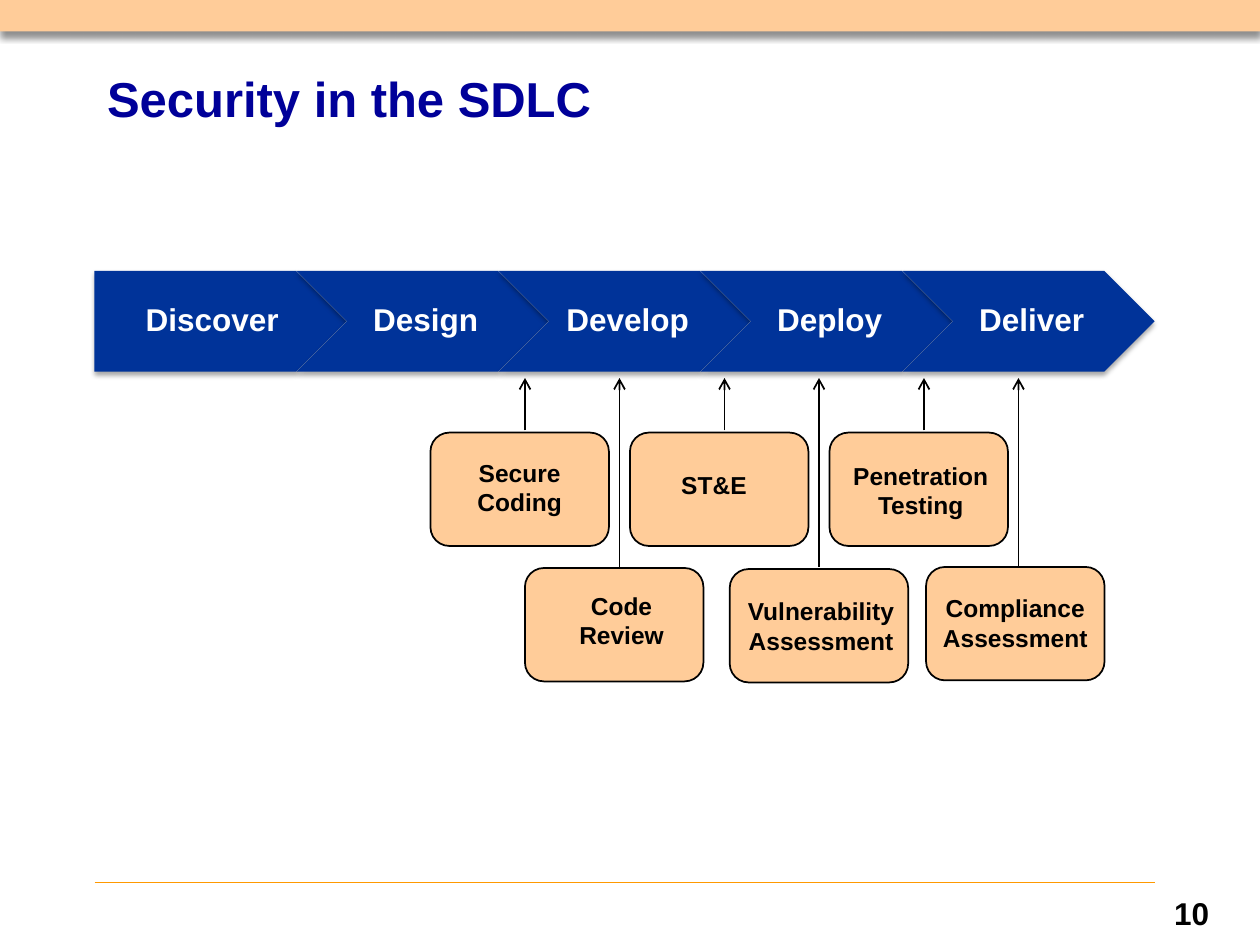
from dataclasses import dataclass

from lxml import etree
from pptx import Presentation
from pptx import util as u
from pptx.dml.color import RGBColor
from pptx.enum import shapes, text
from pptx.oxml import parse_xml
from pptx.oxml.ns import nsdecls, qn

# The grid has 120 columns and 90 rows of square cells.
COLUMNS, ROWS = 120, 90
CELL = u.Inches(10) // COLUMNS

PEACH = RGBColor(0xFF, 0xCC, 0x99)
ORANGE = RGBColor(0xFF, 0x99, 0x00)
NAVY = RGBColor(0x00, 0x00, 0x99)
BLUE = RGBColor(0x00, 0x33, 0x99)
BLACK = RGBColor(0x00, 0x00, 0x00)
WHITE = RGBColor(0xFF, 0xFF, 0xFF)
FONT = "Arial"

PHASES = ("Discover", "Design", "Develop", "Deploy", "Deliver")
PHASE_LEFT, PHASE_TOP = 9, 25.8
PHASE_WIDTH, PHASE_HEIGHT, PHASE_STEP = 24, 9.6, 19.24
PHASE_TIP = PHASE_HEIGHT / 2
ARROW_END = 36
ACTIVITY_WIDTH, ACTIVITY_HEIGHT = 17, 10.8


@dataclass(frozen=True)
class Box:
    left: float
    top: float
    width: float
    height: float

    def lengths(self) -> tuple[int, ...]:
        return tuple(grid(n) for n in (self.left, self.top, self.width, self.height))


@dataclass(frozen=True)
class Activity:
    name: str
    left: float
    top: float
    label: Box
    arrow_column: float
    arrow_start: float


ACTIVITIES = (
    Activity("Vulnerability Assessment", 69.5, 54.2, Box(68, 56.2, 20.4, 6.8), 78, 54),
    Activity("Compliance Assessment", 88.2, 54, Box(86.5, 55.9, 20.4, 6.8), 97, 54),
    Activity("ST&E", 60, 41.2, Box(63, 44.2, 10, 4.1), 69, 41),
    Activity("Penetration Testing", 79, 41.2, Box(77.5, 43.3, 20.4, 6.8), 88, 41),
    Activity("Code Review", 50, 54.1, Box(52.7, 55.7, 13, 6.8), 59, 54),
    Activity("Secure Coding", 41, 41.2, Box(44, 43, 11, 6.8), 50, 41),
)


def grid(cells: float) -> int:
    return round(cells * CELL)


def style_font(font, size: float, color: RGBColor) -> None:
    font.name, font.size, font.bold = FONT, u.Pt(size), True
    font.color.rgb = color


def add_shape(slide, preset, box: Box, fill: RGBColor, outline: RGBColor | None = None):
    shape = slide.shapes.add_shape(preset, *box.lengths())
    shape.shadow.inherit = False
    shape.fill.solid()
    shape.fill.fore_color.rgb = fill
    if outline is None:
        shape.line.fill.background()
    else:
        shape.line.color.rgb = outline
        shape.line.width = u.Pt(1)
    return shape


def drop_shadow(shape, blur: float, distance: float, opacity: int) -> None:
    """Cast a black shadow straight down; blur and distance are in points."""
    effects = shape._element.spPr.find(qn("a:effectLst"))
    effects.append(parse_xml(
        f'<a:outerShdw {nsdecls("a")} blurRad="{u.Pt(blur)}" dist="{u.Pt(distance)}" '
        f'dir="5400000" algn="t" rotWithShape="0"><a:srgbClr val="{BLACK}">'
        f'<a:alpha val="{opacity * 1000}"/></a:srgbClr></a:outerShdw>'))


def add_label(slide, words: str, box: Box, size: float, color: RGBColor):
    """Add centred bold text and return its text frame."""
    frame = slide.shapes.add_textbox(*box.lengths()).text_frame
    frame.word_wrap = True
    frame.text = words
    paragraph = frame.paragraphs[0]
    paragraph.alignment = text.PP_ALIGN.CENTER
    style_font(paragraph.runs[0].font, size, color)
    return frame


def add_line(slide, start: tuple[float, float], end: tuple[float, float],
             color: RGBColor, width: float):
    line = slide.shapes.add_connector(
        shapes.MSO_CONNECTOR.STRAIGHT, *(grid(n) for n in start + end))
    line.line.color.rgb = color
    line.line.width = u.Pt(width)
    etree.SubElement(line._element.spPr, qn("a:effectLst"))
    return line


def add_frame(slide) -> None:
    add_line(slide, (9, 84), (110, 84), ORANGE, 0.5)
    band = add_shape(slide, shapes.MSO_SHAPE.RECTANGLE, Box(0, 0, COLUMNS, 3), PEACH)
    drop_shadow(band, 4, 3, 43)
    number = add_label(slide, "10", Box(110, 84, 7, 2), 18, BLACK)
    number.paragraphs[0].line_spacing = u.Pt(25)


def add_title(slide) -> None:
    title = slide.shapes.title
    title.left, title.top, title.width, title.height = Box(9, 3.6, 101, 12.4).lengths()
    frame = title.text_frame
    frame.text = "Security in the SDLC"
    frame.vertical_anchor = text.MSO_ANCHOR.MIDDLE
    paragraph = frame.paragraphs[0]
    paragraph.alignment = text.PP_ALIGN.LEFT
    paragraph.line_spacing = u.Pt(28)
    style_font(paragraph.runs[0].font, 28, NAVY)


def add_phase(slide, index: int, name: str) -> None:
    first = index == 0
    left = PHASE_LEFT + index * PHASE_STEP
    preset = shapes.MSO_SHAPE.PENTAGON if first else shapes.MSO_SHAPE.CHEVRON
    step = add_shape(slide, preset, Box(left, PHASE_TOP, PHASE_WIDTH, PHASE_HEIGHT), BLUE)
    drop_shadow(step, 3.1, 1.8, 35)

    notch = 0 if first else PHASE_TIP
    tip = PHASE_TIP / 2 if first else PHASE_TIP
    label = Box(left + notch, PHASE_TOP, PHASE_WIDTH - notch - tip, PHASE_HEIGHT)
    frame = add_label(slide, name, label, 18, WHITE)
    frame.vertical_anchor = text.MSO_ANCHOR.MIDDLE
    frame.margin_left = u.Inches(0.1 if first else 0.08)
    frame.margin_right = u.Inches(0.03)
    frame.paragraphs[0].line_spacing = 0.9


def add_activity(slide, activity: Activity) -> None:
    card = Box(activity.left, activity.top, ACTIVITY_WIDTH, ACTIVITY_HEIGHT)
    add_shape(slide, shapes.MSO_SHAPE.FLOWCHART_ALTERNATE_PROCESS, card, PEACH, BLACK)
    frame = add_label(slide, activity.name, activity.label, 14, BLACK)
    frame.paragraphs[0].space_after = u.Pt(4)
    column = activity.arrow_column
    arrow = add_line(slide, (column, activity.arrow_start), (column, ARROW_END), BLACK, 1)
    etree.SubElement(arrow.line._get_or_add_ln(), qn("a:tailEnd"), type="arrow")


def main() -> None:
    deck = Presentation()
    deck.slide_width, deck.slide_height = COLUMNS * CELL, ROWS * CELL
    slide = deck.slides.add_slide(deck.slide_layouts[5])
    add_frame(slide)
    add_title(slide)
    for index, name in enumerate(PHASES):
        add_phase(slide, index, name)
    for activity in ACTIVITIES:
        add_activity(slide, activity)
    deck.save("out.pptx")


if __name__ == "__main__":
    main()
